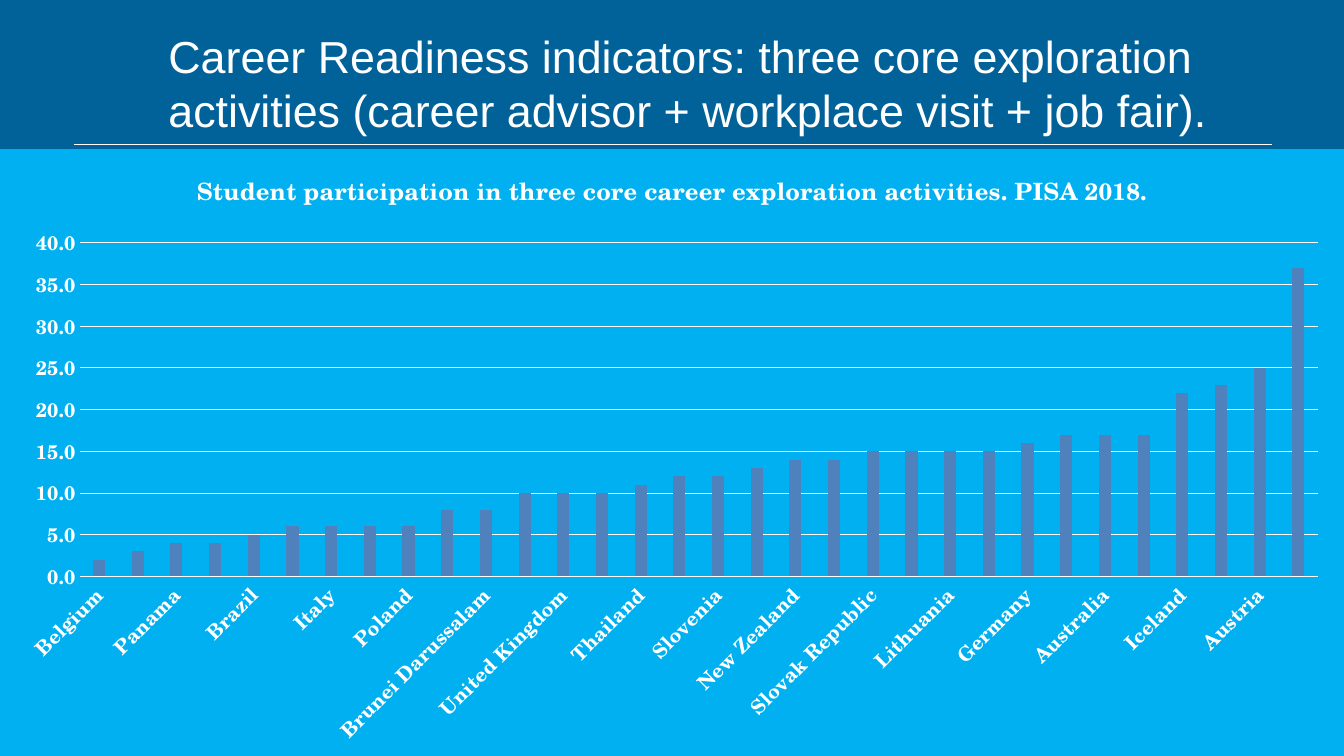
from lxml import etree
from pptx import Presentation
from pptx.chart.data import CategoryChartData
from pptx.dml.color import RGBColor
from pptx.enum.chart import XL_CHART_TYPE as ChartType, XL_TICK_MARK as TickMark
from pptx.enum.shapes import MSO_CONNECTOR as Connector
from pptx.enum.text import MSO_ANCHOR as Anchor, MSO_AUTO_SIZE as AutoSize, PP_ALIGN as Align
from pptx.oxml import parse_xml
from pptx.oxml.ns import nsdecls, qn
from pptx.util import Inches, Pt

NAVY = RGBColor(0x00, 0x62, 0x99)
SKY = RGBColor(0x00, 0xB0, 0xF0)
STEEL = RGBColor(0x4F, 0x81, 0xBD)
WHITE = RGBColor(0xFF, 0xFF, 0xFF)
CHART_FONT = "TeX Gyre Schola"

TITLE = ("Career Readiness indicators: three core exploration activities "
         "(career advisor + workplace visit + job fair).")
CHART_TITLE = "Student participation in three core career exploration activities. PISA 2018."
PARTICIPATION = {
    "Belgium": 2, "Hong Kong (China)": 3, "Panama": 4, "Costa Rica": 4,
    "Brazil": 5, "Korea": 6, "Italy": 6, "Spain": 6,
    "Poland": 6, "Hungary": 8, "Brunei Darussalam": 8, "Morocco": 10,
    "United Kingdom": 10, "Ireland": 10, "Thailand": 11, "Malta": 12,
    "Slovenia": 12, "OECD average": 13, "New Zealand": 14, "Greece": 14,
    "Slovak Republic": 15, "Bulgaria": 15, "Lithuania": 15, "Albania": 15,
    "Germany": 16, "Kazakhstan": 17, "Australia": 17, "Serbia": 17,
    "Iceland": 22, "Chinese Taipei": 23, "Austria": 25, "Denmark": 37,
}


def format_font(font, **values):
    color = values.pop("color", None)
    for name, value in values.items():
        setattr(font, name, value)
    if color is not None:
        font.color.rgb = color


def format_line(line, width):
    line.color.rgb = WHITE
    line.width = Pt(width)


def set_layout(parent, position, places):
    """Fix the place of a chart part."""
    old = parent.find(qn("c:layout"))
    if old is not None:
        parent.remove(old)
    layout = parse_xml(f"<c:layout {nsdecls('c')}><c:manualLayout/></c:layout>")
    for name, value in places.items():
        etree.SubElement(layout[0], qn(f"c:{name}")).set("val", str(value))
    parent.insert(position, layout)


def add_header(page, left, top, width, height):
    # Rule under the title
    rule_top = top + height + 0.05
    rule = page.shapes.add_connector(
        Connector.STRAIGHT, Inches(0.73), Inches(rule_top), Inches(12.62), Inches(rule_top))
    format_line(rule.line, 0.5)
    etree.SubElement(rule._element.spPr, qn("a:effectLst"))

    # Title
    title = page.shapes.title
    title.left, title.top = Inches(left), Inches(top)
    title.width, title.height = Inches(width), Inches(height)
    frame = title.text_frame
    frame.text = TITLE
    frame.word_wrap = True
    frame.auto_size = AutoSize.NONE
    frame.vertical_anchor = Anchor.MIDDLE
    para = frame.paragraphs[0]
    para.alignment = Align.LEFT
    format_font(para.runs[0].font, name="Arial", size=Pt(32), color=WHITE)


def add_participation_chart(page, left, top, width, height):
    data = CategoryChartData(number_format="0.0")
    data.categories = list(PARTICIPATION)
    data.add_series("Series 1", list(PARTICIPATION.values()))
    chart = page.shapes.add_chart(
        ChartType.COLUMN_CLUSTERED, Inches(left), Inches(top),
        Inches(width), Inches(height), data).chart
    chart.has_legend = False
    white_bold = {"name": CHART_FONT, "bold": True, "color": WHITE}
    format_font(chart.font, size=Pt(14), **white_bold)

    # Background
    chart._chartSpace.find(qn("c:chart")).addnext(parse_xml(
        f"<c:spPr {nsdecls('c', 'a')}><a:solidFill><a:srgbClr val='{SKY}'/></a:solidFill>"
        "<a:ln><a:noFill/></a:ln></c:spPr>"))

    # Chart title
    chart.has_title = True
    frame = chart.chart_title.text_frame
    frame.text = CHART_TITLE
    format_font(frame.paragraphs[0].runs[0].font, size=Pt(17), **white_bold)
    set_layout(chart.chart_title._element, 1,
               {"xMode": "edge", "yMode": "edge",
                "x": 1.91 / width, "y": 0.16 / height})

    # Columns
    plot = chart.plots[0]
    plot.gap_width, plot.overlap = 219, -27
    plot.vary_by_categories = False
    fill = plot.series[0].format.fill
    fill.solid()
    fill.fore_color.rgb = STEEL
    set_layout(chart._chartSpace.chart.plotArea, 0,
               {"layoutTarget": "inner", "xMode": "edge", "yMode": "edge",
                "x": 0.79 / width, "y": 0.93 / height,
                "w": 12.28 / width, "h": 3.31 / height})

    # Axes
    countries, percent = chart.category_axis, chart.value_axis
    for axis in (countries, percent):
        axis.major_tick_mark = axis.minor_tick_mark = TickMark.NONE
        format_font(axis.tick_labels.font, size=Pt(14), **white_bold)
    format_line(countries.format.line, 0.75)
    countries._element.find(qn("c:txPr")).find(qn("a:bodyPr")).set("rot", "-2700000")
    countries._element.find(qn("c:noMultiLvlLbl")).addprevious(
        parse_xml(f"<c:tickLblSkip {nsdecls('c')} val='2'/>"))
    percent.minimum_scale, percent.maximum_scale, percent.major_unit = 0, 40, 5
    percent.tick_labels.number_format = "0.0"
    percent.tick_labels.number_format_is_linked = False
    percent.format.line.fill.background()
    percent.has_major_gridlines = True
    format_line(percent.major_gridlines.format.line, 0.75)


def main():
    deck = Presentation()
    deck.slide_width, deck.slide_height = Inches(13.33), Inches(7.5)
    page = deck.slides.add_slide(deck.slide_layouts[5])
    page.background.fill.solid()
    page.background.fill.fore_color.rgb = NAVY
    add_header(page, 1.57, 0.26, 10.81, 1.12)
    add_participation_chart(page, 0, 1.48, 13.33, 6.02)
    deck.save("out.pptx")


if __name__ == "__main__":
    main()
